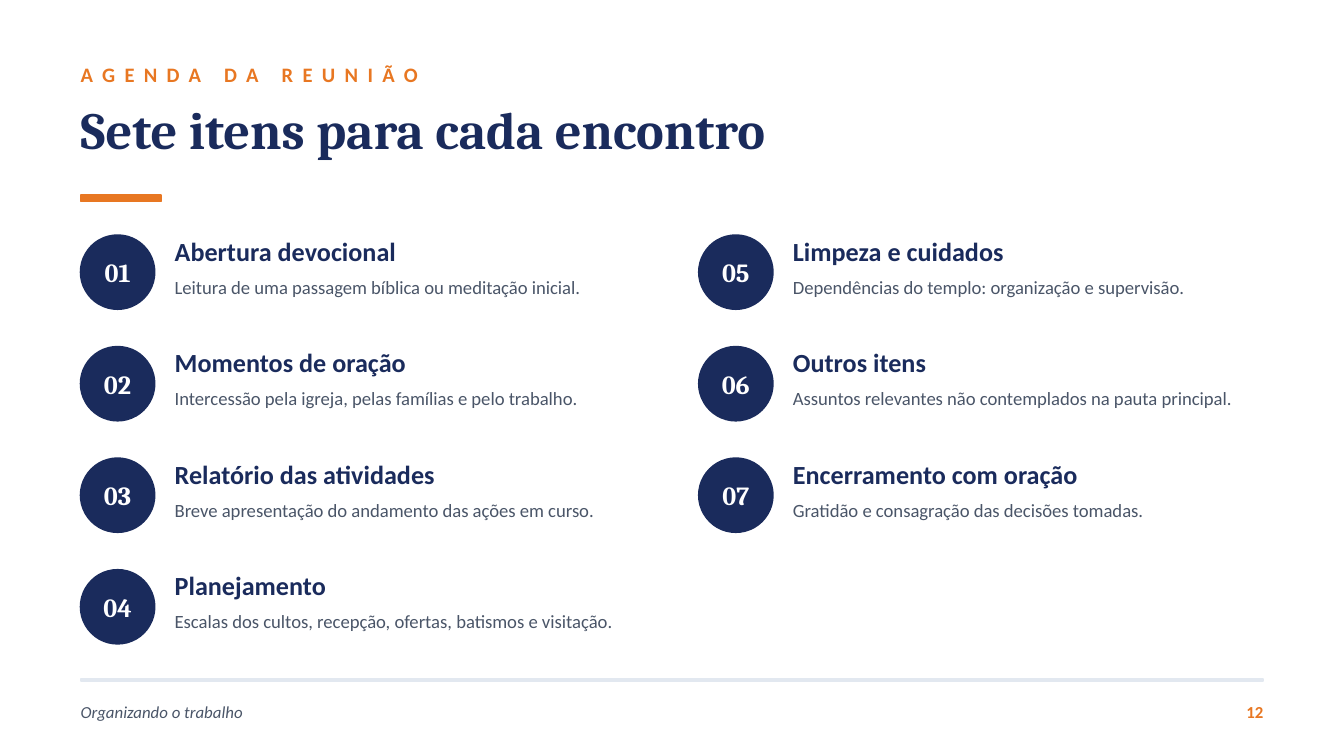
from dataclasses import dataclass

from pptx import Presentation
from pptx.dml.color import RGBColor
from pptx.enum.shapes import MSO_SHAPE
from pptx.enum.text import MSO_ANCHOR, PP_ALIGN
from pptx.shapes.autoshape import Shape
from pptx.slide import Slide
from pptx.util import Inches, Pt

NAVY = "1A2B5C"
ORANGE = "E87722"
SLATE = "4A5568"
PALE = "E2E8F0"
WHITE = "FFFFFF"

LEFT = 0.6
FIRST_TOP = 1.75
COLUMN_STEP = 4.6
ROW_STEP = 0.83
ROWS = 4
BADGE_SIZE = 0.55
TEXT_OFFSET = 0.7


@dataclass(frozen=True)
class Box:
    left: float
    top: float
    width: float
    height: float


@dataclass(frozen=True)
class TextStyle:
    size: float
    color: str
    font: str = "Calibri"
    bold: bool = False
    italic: bool = False
    align: PP_ALIGN = PP_ALIGN.LEFT
    anchor: MSO_ANCHOR = MSO_ANCHOR.TOP
    spacing: int = 0


@dataclass(frozen=True)
class AgendaItem:
    heading: str
    detail: str


EYEBROW = TextStyle(11, ORANGE, bold=True, anchor=MSO_ANCHOR.MIDDLE, spacing=500)
TITLE = TextStyle(28, NAVY, font="Cambria", bold=True)
NUMBER = TextStyle(14, WHITE, font="Cambria", bold=True,
                   align=PP_ALIGN.CENTER, anchor=MSO_ANCHOR.MIDDLE)
HEADING = TextStyle(14, NAVY, bold=True)
DETAIL = TextStyle(10, SLATE)
FOOTER = TextStyle(9, SLATE, italic=True, anchor=MSO_ANCHOR.MIDDLE)
PAGE = TextStyle(9, ORANGE, bold=True, align=PP_ALIGN.RIGHT, anchor=MSO_ANCHOR.MIDDLE)

AGENDA = [
    AgendaItem("Abertura devocional", "Leitura de uma passagem bíblica ou meditação inicial."),
    AgendaItem("Momentos de oração", "Intercessão pela igreja, pelas famílias e pelo trabalho."),
    AgendaItem("Relatório das atividades", "Breve apresentação do andamento das ações em curso."),
    AgendaItem("Planejamento", "Escalas dos cultos, recepção, ofertas, batismos e visitação."),
    AgendaItem("Limpeza e cuidados", "Dependências do templo: organização e supervisão."),
    AgendaItem("Outros itens", "Assuntos relevantes não contemplados na pauta principal."),
    AgendaItem("Encerramento com oração", "Gratidão e consagração das decisões tomadas."),
]


def color(value: str) -> RGBColor:
    return RGBColor.from_string(value)


def lengths(box: Box) -> tuple[Inches, ...]:
    return Inches(box.left), Inches(box.top), Inches(box.width), Inches(box.height)


def write(shape: Shape, text: str, style: TextStyle) -> None:
    frame = shape.text_frame
    frame.text = text
    frame.word_wrap = True
    frame.vertical_anchor = style.anchor
    frame.margin_left = frame.margin_right = frame.margin_top = frame.margin_bottom = 0
    paragraph = frame.paragraphs[0]
    paragraph.alignment = style.align
    run = paragraph.runs[0]
    run.font.name = style.font
    run.font.size = Pt(style.size)
    run.font.bold = style.bold
    run.font.italic = style.italic
    run.font.color.rgb = color(style.color)
    if style.spacing:
        run.font._element.set("spc", str(style.spacing))


def add_text(slide: Slide, box: Box, text: str, style: TextStyle) -> None:
    write(slide.shapes.add_textbox(*lengths(box)), text, style)


def add_solid(slide: Slide, kind: MSO_SHAPE, box: Box, fill: str) -> Shape:
    shape = slide.shapes.add_shape(kind, *lengths(box))
    shape.shadow.inherit = False
    shape.fill.solid()
    shape.fill.fore_color.rgb = color(fill)
    shape.line.color.rgb = color(fill)
    shape.line.width = Pt(1)
    return shape


def add_title(slide: Slide, box: Box, text: str) -> None:
    title = slide.shapes.title
    title.left, title.top, title.width, title.height = lengths(box)
    write(title, text, TITLE)


def add_agenda_item(slide: Slide, index: int, item: AgendaItem) -> None:
    column, row = divmod(index, ROWS)
    left = LEFT + column * COLUMN_STEP
    top = FIRST_TOP + row * ROW_STEP
    badge = add_solid(slide, MSO_SHAPE.OVAL, Box(left, top, BADGE_SIZE, BADGE_SIZE), NAVY)
    write(badge, f"{index + 1:02d}", NUMBER)
    add_text(slide, Box(left + TEXT_OFFSET, top, 3.4, 0.3), item.heading, HEADING)
    add_text(slide, Box(left + TEXT_OFFSET, top + 0.3, 3.6, 0.4), item.detail, DETAIL)


def main() -> None:
    presentation = Presentation()
    presentation.slide_width = Inches(10)
    presentation.slide_height = presentation.slide_width * 9 // 16
    slide = presentation.slides.add_slide(presentation.slide_layouts[5])
    slide.background.fill.solid()
    slide.background.fill.fore_color.rgb = color(WHITE)

    add_text(slide, Box(LEFT, 0.4, 5, 0.3), "AGENDA DA REUNIÃO", EYEBROW)
    add_title(slide, Box(LEFT, 0.72, 9, 0.6), "Sete itens para cada encontro")
    add_solid(slide, MSO_SHAPE.RECTANGLE, Box(LEFT, 1.45, 0.6, 0.05), ORANGE)
    for index, item in enumerate(AGENDA):
        add_agenda_item(slide, index, item)
    add_solid(slide, MSO_SHAPE.RECTANGLE, Box(LEFT, 5.05, 8.8, 0.02), PALE)
    add_text(slide, Box(LEFT, 5.15, 6, 0.3), "Organizando o trabalho", FOOTER)
    add_text(slide, Box(8.9, 5.15, 0.5, 0.3), "12", PAGE)
    presentation.save("out.pptx")


if __name__ == "__main__":
    main()
